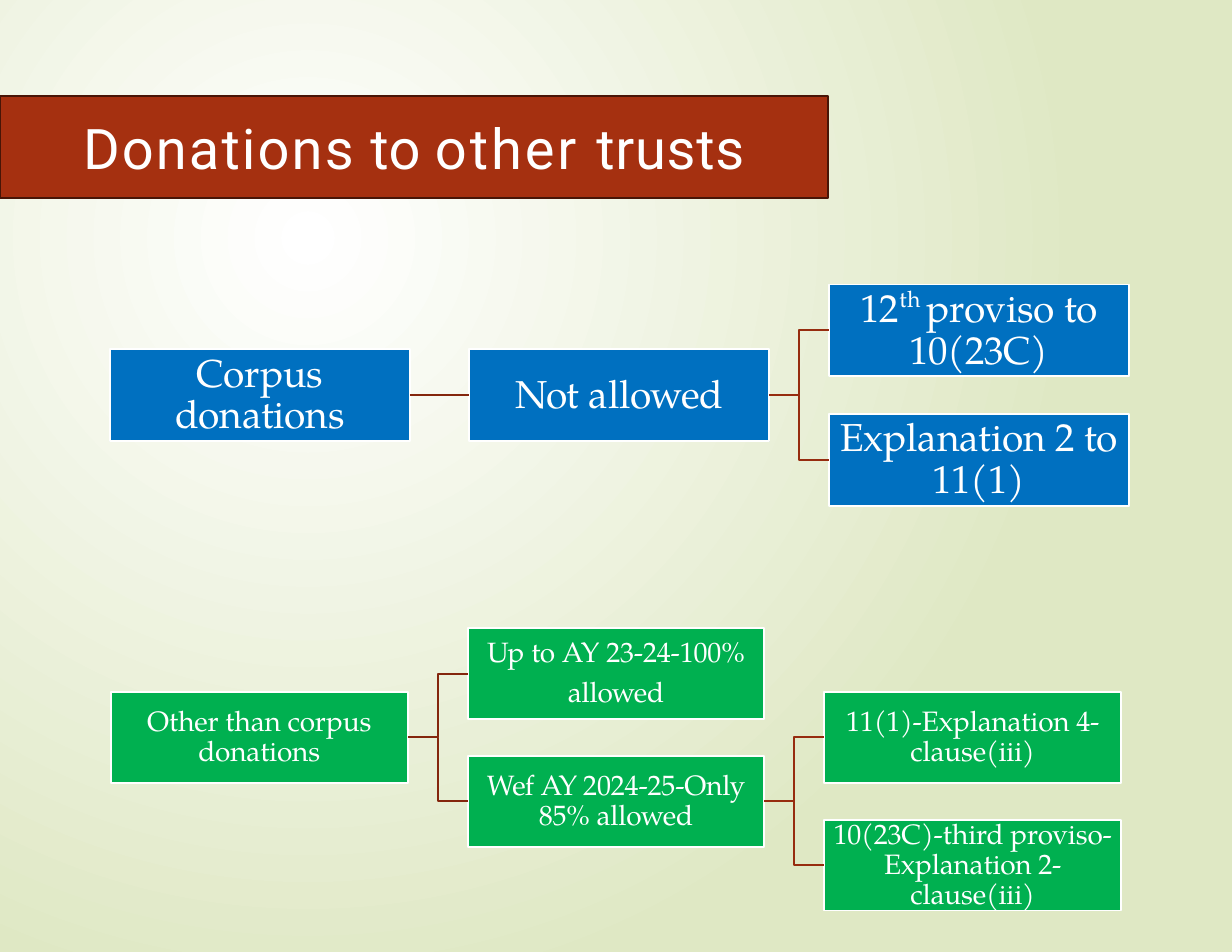
"""Build the slide on donations to other trusts as two tree diagrams."""
from lxml import etree
from pptx import Presentation
from pptx.dml.color import RGBColor
from pptx.enum import dml, shapes, text
from pptx.oxml import ns
from pptx.util import Inches, Pt

THEME = {
    "white": RGBColor.from_string("FFFFFF"),
    "glow": RGBColor.from_string("DFE8C4"),
    "banner": RGBColor.from_string("A53010"),
    "banner_line": RGBColor.from_string("481507"),
    "links": [RGBColor.from_string("84260D"), RGBColor.from_string("962C0F")],
    "blue": RGBColor.from_string("0070C0"),
    "green": RGBColor.from_string("00B050"),
    "title_font": "Roboto",
    "body_font": "TeX Gyre Pagella",
    "title_size": 36,
    "line": 1.25,
}

TREES = [
    {"left": 0.98, "top": 3.12, "dx": 3.21, "dy": 0.58, "w": 2.68, "h": 0.82,
     "fill": "blue", "size": 25, "inset": 0.02,
     "nodes": [
         (0, 0, None, [[("Corpus donations", -0.1)]]),
         (1, 0, 0, [[("Not allowed", -0.1)]]),
         (2, -1, 1, [[("12", 0.1), ("th ", 0.1, 38000), ("proviso to 10(23C)", -0.1)]]),
         (2, 1, 1, [[("Explanation ", -0.1), ("2 ", 0), ("to 11(1)", -0.1)]]),
     ]},
    {"left": 0.99, "top": 6.18, "dx": 3.185, "dy": 0.57, "w": 2.65, "h": 0.81,
     "fill": "green", "size": 18, "inset": 0.01,
     "nodes": [
         (0, 0, None, [[("Other than corpus donations", -0.1)]]),
         (1, -1, 0, [[("Up ", -0.2), ("to AY 23-24-100%", -0.1)], [("allowed", -0.1)]]),
         (1, 1, 0, [[("Wef ", -0.5), ("AY ", -0.7), ("2024-25-Only 85% allowed", -0.1)]]),
         (2, 0, 2, [[("11(1)-Explanation 4- clause(iii)", -0.1)]]),
         (2, 2, 2, [[("10(23C)-third proviso- Explanation 2-clause(iii)", -0.1)]]),
     ]},
]


def add_runs(p, runs, font, size):
    p.alignment = text.PP_ALIGN.CENTER
    for words, spacing, *baseline in runs:
        r = p.add_run()
        r.text = words
        for name, value in {"name": font, "size": Pt(size), "bold": False}.items():
            setattr(r.font, name, value)
        r.font.color.rgb = THEME["white"]
        rpr = r.font._element
        rpr.set("spc", str(round(spacing * 100)))
        if baseline:
            rpr.set("baseline", str(baseline[0]))


def paint(sp, fill, line):
    sp.fill.solid()
    sp.fill.fore_color.rgb = fill
    sp.line.color.rgb = line
    sp.line.width = Pt(THEME["line"])


prs = Presentation()
prs.slide_width, prs.slide_height = Inches(11), Inches(8.5)
s = prs.slides.add_slide(prs.slide_layouts[5])

fill = s.background.fill
fill.gradient()
for stop, name in zip(fill.gradient_stops, ("white", "glow")):
    stop.color.rgb = THEME[name]
grad = s.background._cSld.find(".//" + ns.qn("a:gradFill"))
lin = grad.find(ns.qn("a:lin"))
circle = etree.Element(ns.qn("a:path"), {"path": "circle"})
etree.SubElement(circle, ns.qn("a:fillToRect"),
                 {"l": "50000", "t": "50000", "r": "100000", "b": "100000"})
grad.replace(lin, circle)

for tree in TREES:
    boxes = []
    for col, row, parent, paras in tree["nodes"]:
        sp = s.shapes.add_shape(
            shapes.MSO_SHAPE.RECTANGLE,
            Inches(tree["left"] + col * tree["dx"]), Inches(tree["top"] + row * tree["dy"]),
            Inches(tree["w"]), Inches(tree["h"]))
        sp.shadow.inherit = False
        paint(sp, THEME[tree["fill"]], THEME["white"])
        tf = sp.text_frame
        inset = Inches(tree["inset"])
        for name, value in {"word_wrap": True, "vertical_anchor": text.MSO_ANCHOR.MIDDLE,
                            "margin_left": inset, "margin_right": inset,
                            "margin_top": inset, "margin_bottom": inset}.items():
            setattr(tf, name, value)
        for i, runs in enumerate(paras):
            p = tf.add_paragraph() if i else tf.paragraphs[0]
            p.line_spacing = 0.9
            p.space_after = Pt(0.35 * tree["size"])
            add_runs(p, runs, THEME["body_font"], tree["size"])
        boxes.append(sp)
        if parent is None:
            continue
        straight = row == tree["nodes"][parent][1]
        kind = shapes.MSO_CONNECTOR.STRAIGHT if straight else shapes.MSO_CONNECTOR.ELBOW
        link = s.shapes.add_connector(kind, 0, 0, 0, 0)
        link.begin_connect(boxes[parent], 3)
        link.end_connect(sp, 1)
        link.line.color.rgb = THEME["links"][col - 1]
        link.line.width = Pt(THEME["line"])
        etree.SubElement(link._element.spPr, ns.qn("a:effectLst"))

title = s.shapes.title
for name, value in {"left": 0, "top": 0.86, "width": 7.39, "height": 0.91}.items():
    setattr(title, name, Inches(value))
geometry = etree.SubElement(title._element.spPr, ns.qn("a:prstGeom"), {"prst": "homePlate"})
etree.SubElement(geometry, ns.qn("a:avLst"))
paint(title, THEME["banner"], THEME["banner_line"])
tf = title.text_frame
for name, value in {"word_wrap": True, "auto_size": text.MSO_AUTO_SIZE.NONE,
                    "vertical_anchor": text.MSO_ANCHOR.MIDDLE}.items():
    setattr(tf, name, value)
add_runs(tf.paragraphs[0],
         [("Donations", 1.4), (" to ", 0.2), ("other ", 1.9), ("trusts", 0.5)],
         THEME["title_font"], THEME["title_size"])

prs.save("out.pptx")
